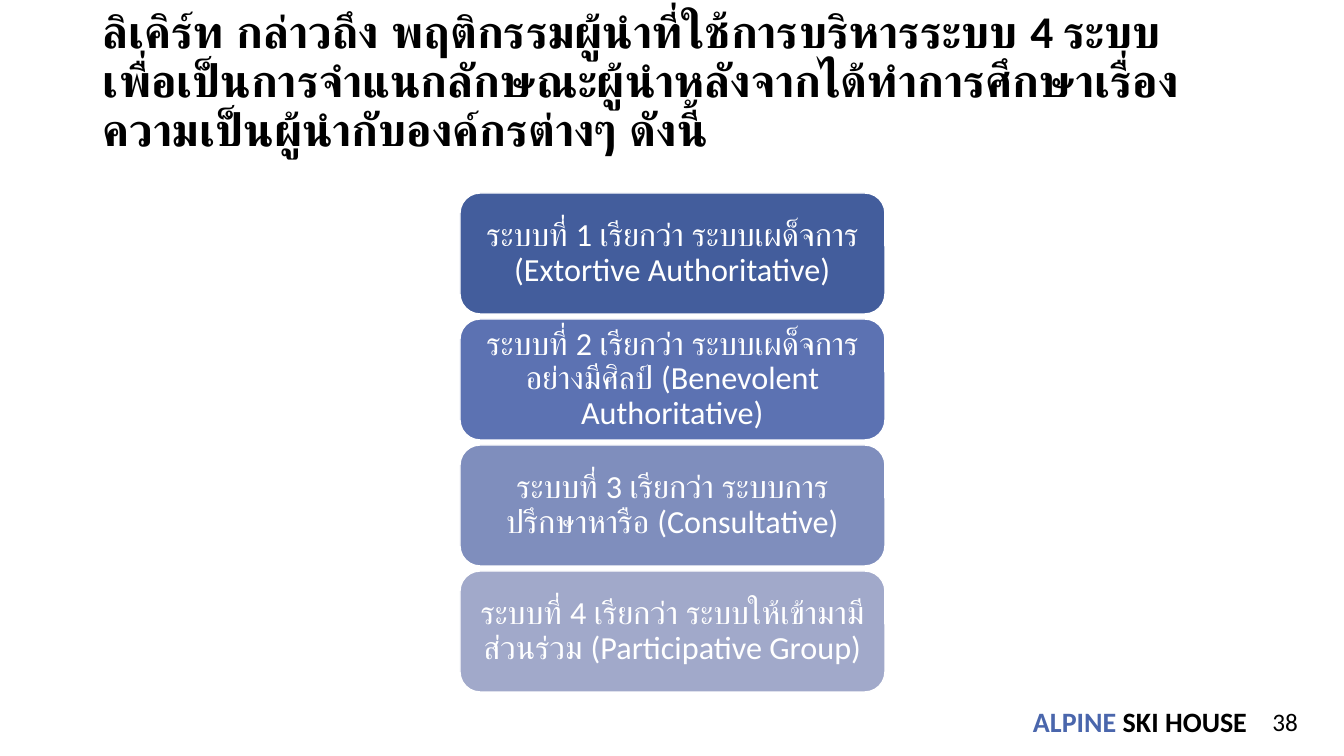
import dataclasses

import pptx
import pptx.dml.color
import pptx.enum.shapes
import pptx.enum.text
import pptx.shapes.autoshape
import pptx.util

RGB = pptx.dml.color.RGBColor
ALIGN = pptx.enum.text.PP_ALIGN
ANCHOR = pptx.enum.text.MSO_ANCHOR

BLACK = RGB(0x00, 0x00, 0x00)
WHITE = RGB(0xFF, 0xFF, 0xFF)
BLUE = RGB(0x4A, 0x66, 0xAC)
FONT = "Calibri"
WIDE, HIGH = 1344, 756
SCALE = 12192000 / WIDE  # EMU in one px

CARD_LEFT, CARD_TOP, CARD_WIDE, CARD_HIGH, CARD_STEP = 460, 193, 425, 121, 126


@dataclasses.dataclass(frozen=True)
class Card:
    text: str
    fill: RGB


CARDS = [
    Card("ระบบที่ 1 เรียกว่า ระบบเผด็จการ (Extortive Authoritative)", RGB(0x43, 0x5D, 0x9C)),
    Card("ระบบที่ 2 เรียกว่า ระบบเผด็จการอย่างมีศิลป์ (Benevolent Authoritative)",
         RGB(0x5C, 0x72, 0xB2)),
    Card("ระบบที่ 3 เรียกว่า ระบบการปรึกษาหารือ (Consultative)", RGB(0x7F, 0x8E, 0xBD)),
    Card("ระบบที่ 4 เรียกว่า ระบบให้เข้ามามีส่วนร่วม (Participative Group)",
         RGB(0xA1, 0xA9, 0xCA)),
]

TITLE = ("ลิเคิร์ท กล่าวถึง พฤติกรรมผู้นำที่ใช้การบริหารระบบ 4 ระบบ "
         "เพื่อเป็นการจำแนกลักษณะผู้นำหลังจากได้ทำการศึกษาเรื่อง"
         "ความเป็นผู้นำกับองค์กรต่างๆ ดังนี้")


def px(count: int) -> pptx.util.Emu:
    return pptx.util.Emu(round(count * SCALE))


def write(shape: pptx.shapes.autoshape.Shape, *runs: tuple[str, RGB], size: float,
          bold: bool = False, align: ALIGN = ALIGN.LEFT, anchor: ANCHOR = ANCHOR.MIDDLE,
          line: float = 1.0, wrap: bool = True, inset: tuple[int, int] = (10, 5)) -> None:
    """Fill a shape with one paragraph of (text, colour) runs."""
    frame = shape.text_frame
    frame.word_wrap = wrap
    frame.vertical_anchor = anchor
    frame.margin_left = frame.margin_right = px(inset[0])
    frame.margin_top = frame.margin_bottom = px(inset[1])
    para = frame.paragraphs[0]
    para.alignment = align
    para.line_spacing = line
    for text, color in runs:
        run = para.add_run()
        run.text = text
        run.font.name = FONT
        run.font.size = pptx.util.Pt(size)
        run.font.bold = bold
        run.font.color.rgb = color


def main() -> None:
    deck = pptx.Presentation()
    deck.slide_width, deck.slide_height = px(WIDE), px(HIGH)
    shapes = deck.slides.add_slide(deck.slide_layouts[6]).shapes

    brand = shapes.add_textbox(px(1031), px(702), px(220), px(38))
    write(brand, ("ALPINE", BLUE), (" SKI HOUSE", BLACK), size=20, bold=True,
          wrap=False, inset=(2, 2))

    title = shapes.add_textbox(px(93), px(47), px(1159), px(71))
    write(title, (TITLE, BLACK), size=32.4, bold=True, line=0.9)

    for row, card in enumerate(CARDS):
        box = shapes.add_shape(
            pptx.enum.shapes.MSO_SHAPE.ROUNDED_RECTANGLE, px(CARD_LEFT),
            px(CARD_TOP + row * CARD_STEP), px(CARD_WIDE), px(CARD_HIGH))
        box.shadow.inherit = False
        box.fill.solid()
        box.fill.fore_color.rgb = card.fill
        box.line.color.rgb = WHITE
        box.line.width = pptx.util.Pt(1)
        write(box, (card.text, WHITE), size=23, align=ALIGN.CENTER, line=0.9)

    page = shapes.add_textbox(px(1252), px(701), px(56), px(40))
    write(page, ("38", BLACK), size=18, align=ALIGN.RIGHT, anchor=ANCHOR.TOP)

    deck.save("out.pptx")


if __name__ == "__main__":
    main()
